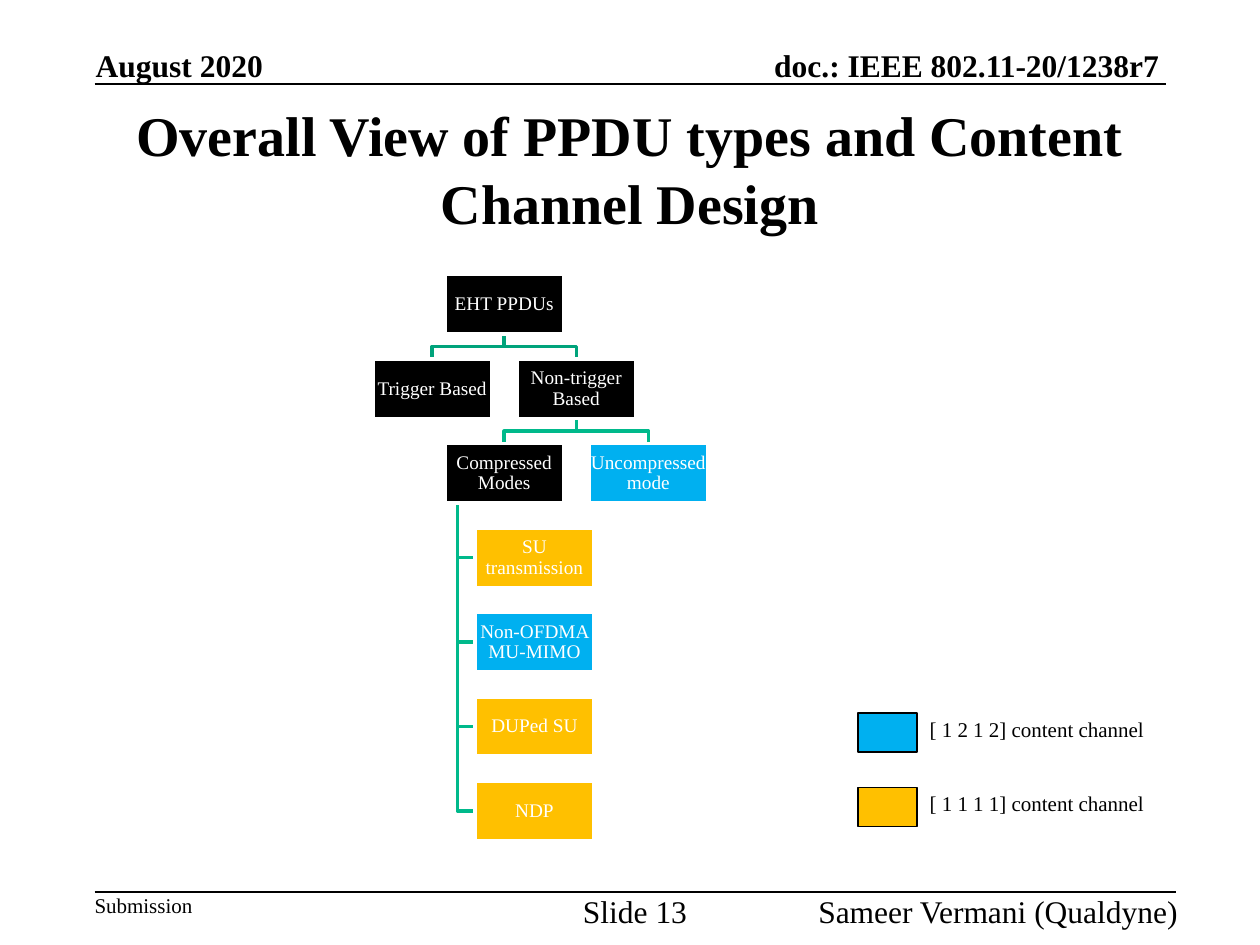
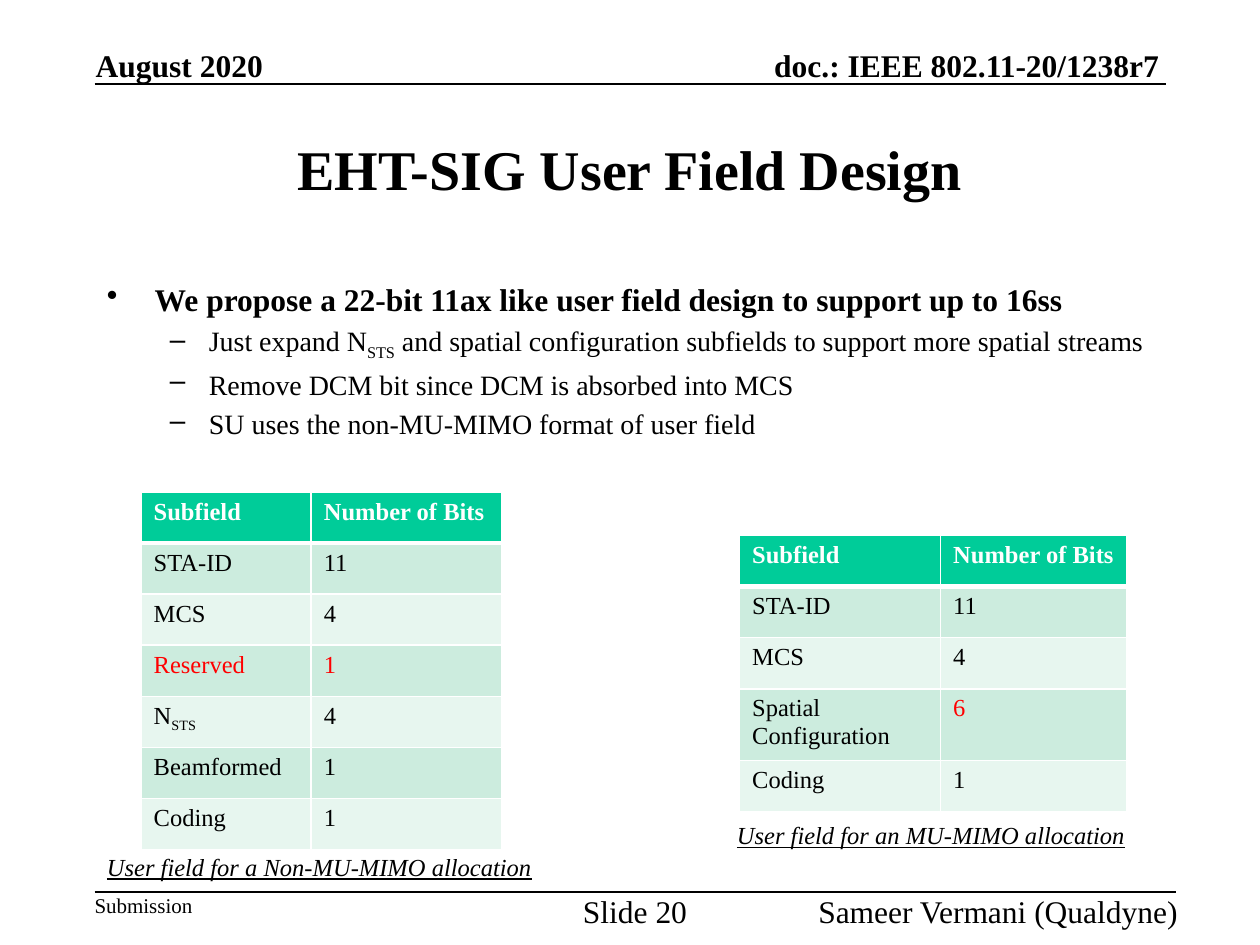
from lxml.etree import SubElement
from pptx import Presentation
from pptx.dml.color import RGBColor
from pptx.enum.shapes import MSO_CONNECTOR, MSO_SHAPE
from pptx.enum.text import MSO_ANCHOR, MSO_AUTO_SIZE, PP_ALIGN
from pptx.oxml.ns import qn
from pptx.util import Inches, Pt

WIDTH, HEIGHT = Inches(10), Inches(7.5)
FONT = "Times New Roman"
COLOURS = {
    "ink": "000000", "paper": "FFFFFF", "alert": "FF0000",
    "blue": "00B0F0", "amber": "FFC000",
    "upper_branch": "00A37B", "lower_branch": "00B98B",
    "table_head": "00CC99", "band_dark": "CCECDE", "band_light": "E7F6EF",
}
STYLES = {
    "title": {"size": Pt(32), "bold": True},
    "header": {"size": Pt(18), "bold": True},
    "footer": {"size": Pt(18)},
    "small": {"size": Pt(12)},
    "node": {"size": Pt(11)},
    "point": {"size": Pt(18), "bold": True},
    "subpoint": {"size": Pt(16)},
    "caption": {"size": Pt(14), "italic": True, "underline": True},
    "cell": {"size": Pt(14), "bold": False},
    "head_cell": {"size": Pt(14), "bold": True},
}
NO_INSET = (0, 0, 0, 0)
USUAL_INSET = (0.1, 0.05, 0.1, 0.05)

# Tree: label, column, row, fill, parent label
TREE = [
    ("EHT PPDUs", 1, 0, "ink", None),
    ("Trigger Based", 0, 1, "ink", "EHT PPDUs"),
    ("Non-trigger Based", 2, 1, "ink", "EHT PPDUs"),
    ("Compressed Modes", 1, 2, "ink", "Non-trigger Based"),
    ("Uncompressed mode", 3, 2, "blue", "Non-trigger Based"),
    ("SU transmission", 1.42, 3, "amber", "Compressed Modes"),
    ("Non-OFDMA MU-MIMO", 1.42, 4, "blue", "Compressed Modes"),
    ("DUPed SU", 1.42, 5, "amber", "Compressed Modes"),
    ("NDP", 1.42, 6, "amber", "Compressed Modes"),
]

# Text between bars is subscript
POINTS = [
    ("point", "We propose a 22-bit 11ax like user field design to support up to 16ss"),
    ("subpoint", "Just expand N|STS| and spatial configuration subfields "
                 "to support more spatial streams"),
    ("subpoint", "Remove DCM bit since DCM is absorbed into MCS"),
    ("subpoint", "SU uses the non-MU-MIMO format of user field"),
]
BULLETS = {"point": ("•", 0.38, -0.38), "subpoint": ("–", 0.81, -0.31)}

HEADINGS = ("Subfield", "Number of Bits")
SINGLE_USER_FIELD = [HEADINGS, ("STA-ID", "11"), ("MCS", "4"), ("Reserved", "1"),
                     ("N|STS|", "4"), ("Beamformed", "1"), ("Coding", "1")]
MULTI_USER_FIELD = [HEADINGS, ("STA-ID", "11"), ("MCS", "4"),
                    ("Spatial Configuration", "6"), ("Coding", "1")]


def across(percent):
    return round(WIDTH * percent / 100)


def down(percent):
    return round(HEIGHT * percent / 100)


def area(left, top, width, height):
    """Turn percentages of the slide into lengths."""
    return across(left), down(top), across(width), down(height)


def rgb(name):
    return RGBColor.from_string(COLOURS[name])


def apply(target, values):
    for attribute, value in values.items():
        setattr(target, attribute, value)


def write(paragraph, text, style, colour="ink"):
    for index, part in enumerate(text.split("|")):
        if not part:
            continue
        run = paragraph.add_run()
        run.text = part
        apply(run.font, {"name": FONT, **STYLES[style]})
        run.font.color.rgb = rgb(colour)
        if index % 2:
            run.font._element.set("baseline", "-25000")


def set_frame(frame, insets, anchor, wrap):
    sides = ("margin_left", "margin_top", "margin_right", "margin_bottom")
    apply(frame, dict(zip(sides, map(Inches, insets))))
    apply(frame, {"vertical_anchor": anchor, "word_wrap": wrap})


def add_label(slide, place, text, style, align=PP_ALIGN.LEFT,
              anchor=MSO_ANCHOR.TOP, insets=NO_INSET, wrap=False):
    frame = slide.shapes.add_textbox(*area(*place)).text_frame
    set_frame(frame, insets, anchor, wrap)
    if not wrap:
        frame.auto_size = MSO_AUTO_SIZE.SHAPE_TO_FIT_TEXT
    frame.paragraphs[0].alignment = align
    write(frame.paragraphs[0], text, style)


def add_rule(slide, left, right, height):
    rule = slide.shapes.add_connector(MSO_CONNECTOR.STRAIGHT, across(left), down(height),
                                      across(right), down(height))
    rule.line.color.rgb = rgb("ink")
    rule.line.width = Pt(1)
    SubElement(rule._element.spPr, qn("a:effectLst"))


def add_box(slide, bounds, fill, outline, weight):
    box = slide.shapes.add_shape(MSO_SHAPE.RECTANGLE, *bounds)
    box.shadow.inherit = False
    box.fill.solid()
    box.fill.fore_color.rgb = rgb(fill)
    box.line.color.rgb = rgb(outline)
    box.line.width = Pt(weight)
    return box


def start_slide(deck, title, number):
    """Blank slide with the shared header, title and footer."""
    slide = deck.slides.add_slide(deck.slide_layouts[6])
    low = MSO_ANCHOR.BOTTOM
    add_label(slide, (7.6, 4.9, 15.9, 4), "August 2020", "header", anchor=low)
    add_label(slide, (56.1, 4.9, 35.9, 4), "doc.: IEEE 802.11-20/1238r7", "header",
              PP_ALIGN.RIGHT, low)
    add_rule(slide, 7.5, 92.5, 8.9)
    add_label(slide, (7.5, 10, 85, 15.6), title, "title", PP_ALIGN.CENTER,
              MSO_ANCHOR.MIDDLE, USUAL_INSET, True)
    add_rule(slide, 7.5, 93.3, 94.4)
    add_label(slide, (7.5, 94.4, 7.9, 2.67), "Submission", "small")
    add_label(slide, (44.4, 94.4, 12, 4), f"Slide {number}", "footer", PP_ALIGN.CENTER)
    add_label(slide, (60.5, 94.4, 33, 4), "Sameer Vermani (Qualdyne)", "footer",
              PP_ALIGN.RIGHT)
    return slide


def node_bounds(column, row):
    return area(29.6 + 5.72 * column, 29.07 + 8.94 * row, 9.4, 6.27)


def add_branch(slide, parent, child, colour):
    """Elbow from a parent's underside; children off the grid hang at the side."""
    left, top, width, height = node_bounds(*parent)
    child_left, child_top, _, _ = node_bounds(*child)
    bottom = top + height
    if child[0] % 1:
        stem, middle = left + across(1), child_top + height // 2
        points = [(stem, bottom), (stem, middle), (child_left, middle)]
    else:
        stem, end = left + width // 2, child_left + width // 2
        middle = (bottom + child_top) // 2
        points = [(stem, bottom), (stem, middle), (end, middle), (end, child_top)]
    path = slide.shapes.build_freeform(*points[0], scale=1.0)
    path.add_line_segments(points[1:], close=False)
    branch = path.convert_to_shape()
    branch.shadow.inherit = False
    branch.fill.background()
    branch.line.color.rgb = rgb(colour)
    branch.line.width = Pt(2)


def add_tree(slide):
    spots = {label: (column, row) for label, column, row, _, _ in TREE}
    for label, _, row, _, parent in TREE:
        if parent:
            colour = "upper_branch" if row == 1 else "lower_branch"
            add_branch(slide, spots[parent], spots[label], colour)
    for label, column, row, fill, _ in TREE:
        node = add_box(slide, node_bounds(column, row), fill, "paper", 2)
        set_frame(node.text_frame, NO_INSET, MSO_ANCHOR.MIDDLE, True)
        paragraph = node.text_frame.paragraphs[0]
        apply(paragraph, {"alignment": PP_ALIGN.CENTER, "line_spacing": 0.9})
        write(paragraph, label, "node", "paper")


def add_legend_entry(slide, top, fill, text):
    add_box(slide, area(68.1, top, 4.7, 4.13), fill, "ink", 1)
    add_label(slide, (72.8, top - 0.33, 19.3, 4), text, "small", insets=USUAL_INSET)


def add_points(slide):
    frame = slide.shapes.add_textbox(*area(7.5, 29, 85, 22)).text_frame
    set_frame(frame, USUAL_INSET, MSO_ANCHOR.TOP, True)
    for index, (style, text) in enumerate(POINTS):
        paragraph = frame.add_paragraph() if index else frame.paragraphs[0]
        mark, margin, indent = BULLETS[style]
        properties = paragraph._p.get_or_add_pPr()
        properties.set("marL", str(Inches(margin)))
        properties.set("indent", str(Inches(indent)))
        SubElement(properties, qn("a:buChar"), char=mark)
        if index:
            paragraph.space_before = Pt(3.2)
        write(paragraph, text, style)


def set_borders(cell, row):
    weights = {"L": 1, "R": 1, "T": 3 if row == 1 else 1, "B": 3 if row == 0 else 1}
    properties = cell._tc.get_or_add_tcPr()
    for side, weight in weights.items():
        edge = SubElement(properties, qn(f"a:ln{side}"), w=str(Pt(weight)))
        fill = SubElement(edge, qn("a:solidFill"))
        SubElement(fill, qn("a:srgbClr"), val=COLOURS["paper"])


def add_field_table(slide, left, top, widths, rows, alerts):
    bounds = area(left, top, sum(widths), 5.41 * len(rows))
    table = slide.shapes.add_table(len(rows), len(widths), *bounds).table
    for column, width in zip(table.columns, widths):
        column.width = across(width)
    for r, values in enumerate(rows):
        for c, text in enumerate(values):
            cell = table.cell(r, c)
            set_borders(cell, r)
            cell.fill.solid()
            band = "band_dark" if r % 2 else "band_light"
            cell.fill.fore_color.rgb = rgb(band if r else "table_head")
            colour = "alert" if (r, c) in alerts else "ink" if r else "paper"
            write(cell.text_frame.paragraphs[0], text,
                  "cell" if r else "head_cell", colour)


def add_caption(slide, left, top, width, text):
    add_label(slide, (left, top, width, 4.53), text, "caption", insets=USUAL_INSET)


def main():
    deck = Presentation()
    apply(deck, {"slide_width": WIDTH, "slide_height": HEIGHT})

    # PPDU types
    overview = start_slide(deck, "Overall View of PPDU types and Content Channel Design", 13)
    add_tree(overview)
    add_legend_entry(overview, 75.47, "blue", "[ 1 2 1 2] content channel")
    add_legend_entry(overview, 83.33, "amber", "[ 1 1 1 1] content channel")

    # User field formats
    design = start_slide(deck, "EHT-SIG User Field Design", 20)
    add_points(design)
    add_field_table(design, 11.2, 52.05, (13.5, 15.1), SINGLE_USER_FIELD, {(3, 0), (3, 1)})
    add_caption(design, 7.5, 89.47, 36.1, "User field for a Non-MU-MIMO allocation")
    add_field_table(design, 58.7, 56.67, (15.95, 14.8), MULTI_USER_FIELD, {(3, 1)})
    add_caption(design, 57.5, 86.13, 33.1, "User field for an MU-MIMO allocation")

    deck.save("out.pptx")


if __name__ == "__main__":
    main()
